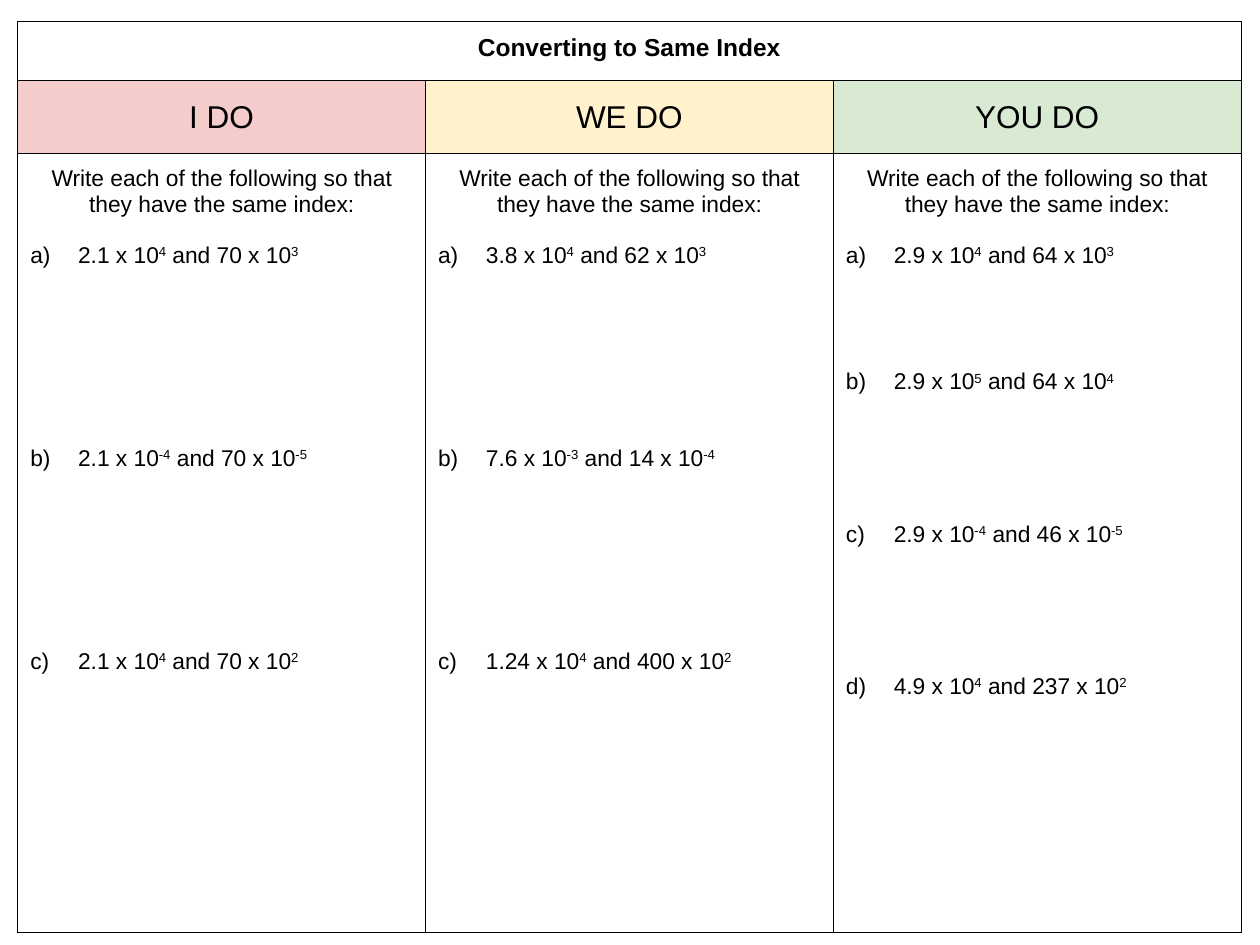
from pptx import Presentation
from pptx.dml.color import RGBColor
from pptx.enum.text import MSO_ANCHOR, PP_ALIGN
from pptx.oxml import parse_xml
from pptx.oxml.ns import nsdecls
from pptx.util import Inches, Pt

LINE_HEIGHT = 14.5  # one line of 13 pt text, in points
INDENT = 0.38
PROMPT = "Write each of the following so that they have the same index:"
ROW_HEIGHTS = (0.47, 0.58, 6.18)

# Heading, fill, blank lines before each question,
# questions as (factor, index, factor, index)
LESSON_COLUMNS = [
    ("I DO", "F4CCCC", (1, 7, 7),
     [("2.1", "4", "70", "3"), ("2.1", "-4", "70", "-5"), ("2.1", "4", "70", "2")]),
    ("WE DO", "FFF2CC", (1, 7, 7),
     [("3.8", "4", "62", "3"), ("7.6", "-3", "14", "-4"), ("1.24", "4", "400", "2")]),
    ("YOU DO", "D9EAD3", (1, 4, 5, 5),
     [("2.9", "4", "64", "3"), ("2.9", "5", "64", "4"),
      ("2.9", "-4", "46", "-5"), ("4.9", "4", "237", "2")]),
]


def color(hex_code):
    return RGBColor.from_string(hex_code)


def add_run(paragraph, text, size, bold=False, raised=False):
    run = paragraph.add_run()
    run.text = text
    run.font.name = "Arial"
    run.font.size = Pt(size)
    run.font.bold = bold
    run.font.color.rgb = color("000000")
    if raised:
        run.font._element.set("baseline", "30000")


def style_cell(cell, fill=None, anchor=MSO_ANCHOR.TOP):
    cell.margin_left = cell.margin_right = Inches(0.1)
    cell.margin_top = cell.margin_bottom = Inches(0.1)
    cell.vertical_anchor = anchor
    properties = cell._tc.get_or_add_tcPr()
    for position, side in enumerate(("lnL", "lnR", "lnT", "lnB")):
        border = parse_xml(
            f'<a:{side} {nsdecls("a")} w="{Pt(0.75)}"><a:solidFill>'
            f'<a:srgbClr val="000000"/></a:solidFill></a:{side}>')
        properties.insert(position, border)
    if fill:
        cell.fill.solid()
        cell.fill.fore_color.rgb = color(fill)
    else:
        cell.fill.background()


def write_heading(cell, text, size, bold=False):
    heading = cell.text_frame.paragraphs[0]
    heading.alignment = PP_ALIGN.CENTER
    add_run(heading, text, size, bold)


def add_question(frame, question, blank_lines):
    paragraph = frame.add_paragraph()
    paragraph.space_before = Pt(blank_lines * LINE_HEIGHT)
    properties = paragraph._p.get_or_add_pPr()
    properties.set("marL", str(Inches(INDENT)))
    properties.set("indent", str(-Inches(INDENT)))
    properties.append(parse_xml(
        f'<a:buClr {nsdecls("a")}><a:srgbClr val="000000"/></a:buClr>'))
    properties.append(parse_xml(
        f'<a:buAutoNum {nsdecls("a")} type="alphaLcParenR"/>'))
    first, first_index, second, second_index = question
    add_run(paragraph, f"{first} x 10", 13)
    add_run(paragraph, first_index, 13, raised=True)
    add_run(paragraph, f" and {second} x 10", 13)
    add_run(paragraph, second_index, 13, raised=True)


def write_questions(cell, questions, gaps):
    write_heading(cell, PROMPT, 13)
    for question, blank_lines in zip(questions, gaps):
        add_question(cell.text_frame, question, blank_lines)


def add_lesson_table(slide, left, top, width, height):
    table = slide.shapes.add_table(
        len(ROW_HEIGHTS), len(LESSON_COLUMNS),
        Inches(left), Inches(top), Inches(width), Inches(height)).table
    table.first_row = table.horz_banding = False
    for row, share in zip(table.rows, ROW_HEIGHTS):
        row.height = Inches(height * share / sum(ROW_HEIGHTS))

    # Title across all columns
    for column in range(len(LESSON_COLUMNS)):
        style_cell(table.cell(0, column))
    title = table.cell(0, 0)
    title.merge(table.cell(0, len(LESSON_COLUMNS) - 1))
    write_heading(title, "Converting to Same Index", 14, bold=True)

    # One heading and one question list per column
    for column, (name, fill, gaps, questions) in enumerate(LESSON_COLUMNS):
        heading, exercise = table.cell(1, column), table.cell(2, column)
        style_cell(heading, fill, MSO_ANCHOR.MIDDLE)
        write_heading(heading, name, 18)
        style_cell(exercise)
        write_questions(exercise, questions, gaps)


def main():
    presentation = Presentation()
    presentation.slide_width = Inches(10)
    presentation.slide_height = Inches(7.5)
    slide = presentation.slides.add_slide(presentation.slide_layouts[6])
    add_lesson_table(slide, 0.14, 0.17, 9.71, 7.23)
    presentation.save("out.pptx")


if __name__ == "__main__":
    main()
